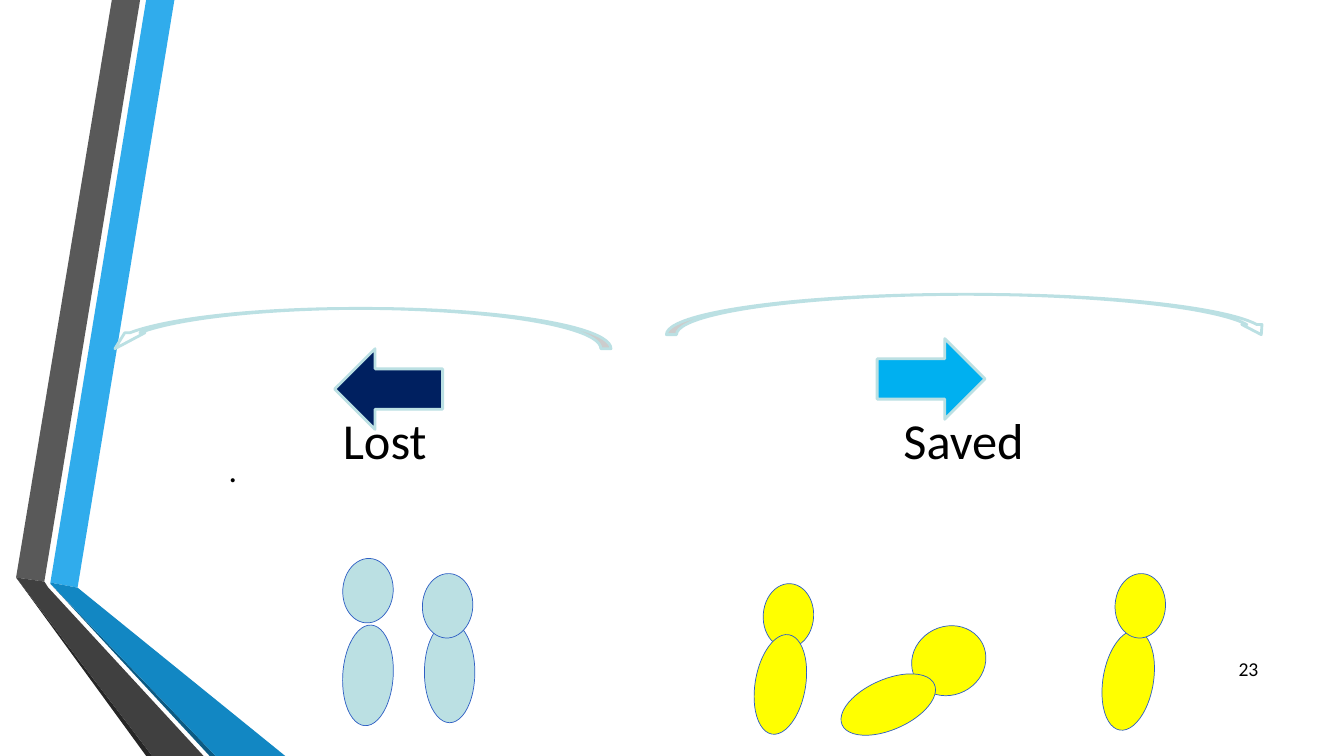
from dataclasses import dataclass

from lxml.etree import SubElement
from pptx import Presentation
from pptx.dml.color import RGBColor
from pptx.enum.shapes import MSO_SHAPE
from pptx.enum.text import MSO_ANCHOR, PP_ALIGN
from pptx.oxml.ns import qn
from pptx.util import Inches, Pt


@dataclass(frozen=True)
class Theme:
    font: str = "Calibri"
    title_size: int = 36
    body_size: int = 24
    number_size: int = 14
    text: str = "000000"
    white: str = "FFFFFF"
    pale: str = "BBE0E3"
    yellow: str = "FFFF00"
    navy: str = "002060"
    sky: str = "00B0F0"
    figure_line: str = "2F5FC4"
    ribbon_blue: str = "30ACEC"
    ribbon_blue_fold: str = "1287C3"
    ribbon_blue_edge: str = "0C5A82"
    ribbon_gray: str = "595959"
    ribbon_gray_fold: str = "404040"
    ribbon_gray_edge: str = "262626"


class SlideBuilder:
    def __init__(self, slide, theme):
        self.slide = slide
        self.theme = theme

    def paint(self, shape, fill, line=None, width=0):
        shape.shadow.inherit = False
        shape.fill.solid()
        shape.fill.fore_color.rgb = RGBColor.from_string(fill)
        if line:
            shape.line.color.rgb = RGBColor.from_string(line)
            shape.line.width = Pt(width)
        else:
            shape.line.fill.background()

    def style_text(self, paragraph, size, align=PP_ALIGN.LEFT):
        paragraph.alignment = align
        paragraph.font.name = self.theme.font
        paragraph.font.size = Pt(size)
        paragraph.font.color.rgb = RGBColor.from_string(self.theme.text)

    def title(self, labels, tab_stops, box):
        """Set each label at its own tab stop on the bottom line of the title."""
        shape = self.slide.shapes.title
        shape.left, shape.top, shape.width, shape.height = map(Inches, box)
        frame = shape.text_frame
        frame.vertical_anchor = MSO_ANCHOR.BOTTOM
        frame.word_wrap = True
        paragraph = frame.paragraphs[0]
        paragraph.text = "".join(f"\t{label}" for label in labels)
        paragraph.line_spacing = 1.0
        self.style_text(paragraph, self.theme.title_size)
        tab_list = SubElement(paragraph._p.get_or_add_pPr(), qn("a:tabLst"))
        for position in tab_stops:
            SubElement(tab_list, qn("a:tab"), pos=str(Inches(position)), algn="l")

    def text(self, content, box, size, align=PP_ALIGN.LEFT):
        frame = self.slide.shapes.add_textbox(*map(Inches, box)).text_frame
        frame.word_wrap = True
        frame.vertical_anchor = MSO_ANCHOR.MIDDLE
        frame.text = content
        self.style_text(frame.paragraphs[0], size, align)

    def polygon(self, points, fill):
        start, *others = [(Inches(x), Inches(y)) for x, y in points]
        builder = self.slide.shapes.build_freeform(*start)
        builder.add_line_segments(others, close=True)
        self.paint(builder.convert_to_shape(), fill)

    def arrow(self, kind, box, fill, adjustments=(), flipped=False):
        shape = self.slide.shapes.add_shape(kind, *map(Inches, box))
        for index, value in enumerate(adjustments):
            shape.adjustments[index] = value
        if flipped:
            shape._element.spPr.xfrm.set("flipH", "1")
        self.paint(shape, fill, self.theme.pale, 2)

    def oval(self, box, rotation, fill):
        shape = self.slide.shapes.add_shape(MSO_SHAPE.OVAL, *map(Inches, box))
        shape.rotation = rotation
        self.paint(shape, fill, self.theme.figure_line, 0.5)


def add_ribbons(builder):
    theme = builder.theme
    ribbons = [
        (theme.ribbon_blue, [(0.5, 5.78), (0.77, 5.83), (1.73, 0), (1.45, 0)]),
        (theme.ribbon_gray, [(1.39, 0), (1.11, 0), (0.16, 5.73), (0.44, 5.77)]),
        (theme.ribbon_gray_edge, [(0.16, 5.73), (1.45, 7.5), (1.51, 7.5)]),
        (theme.ribbon_blue_edge, [(0.5, 5.79), (2.08, 7.5), (2.14, 7.5)]),
        (theme.ribbon_blue_fold,
         [(0.5, 5.79), (2.14, 7.5), (2.83, 7.5), (0.77, 5.83), (0.5, 5.78)]),
        (theme.ribbon_gray_fold,
         [(2.02, 7.5), (0.48, 5.83), (0.44, 5.77), (0.16, 5.73), (1.51, 7.5)]),
    ]
    for fill, points in ribbons:
        builder.polygon(points, fill)


def add_arrows(builder):
    theme = builder.theme
    curve = MSO_SHAPE.CURVED_DOWN_ARROW
    builder.arrow(curve, (1.04, 3.06, 5.02, 0.4), theme.white, (0.25, 0.5, 0.394), True)
    builder.arrow(curve, (6.61, 2.92, 6, 0.4), theme.white, (0.25, 0.5, 0.25))
    builder.arrow(MSO_SHAPE.RIGHT_ARROW, (8.7, 3.36, 1.07, 0.8), theme.sky)
    builder.arrow(MSO_SHAPE.LEFT_ARROW, (3.32, 3.46, 1.07, 0.8), theme.navy)


def add_people(builder):
    theme = builder.theme
    body, head = (0.5, 1), (0.5, 0.64)
    parts = [
        ((3.4, 6.2), body, 3.7, theme.pale),
        ((4.21, 6.17), body, 0, theme.pale),
        ((10.94, 6.25), body, 9.7, theme.yellow),
        ((3.4, 5.54), head, 3.7, theme.pale),
        ((11.06, 5.69), head, 3.7, theme.yellow),
        ((7.57, 5.79), head, 3.7, theme.yellow),
        ((4.19, 5.69), head, 3.7, theme.pale),
        ((9.07, 6.18), (0.68, 0.75), 63.3, theme.yellow),
        ((8.56, 6.49), body, 66.3, theme.yellow),
        ((7.49, 6.29), body, 9.7, theme.yellow),
    ]
    for corner, size, rotation, fill in parts:
        builder.oval(corner + size, rotation, fill)


def main():
    presentation = Presentation()
    presentation.slide_width = Inches(13.33)
    presentation.slide_height = Inches(7.5)
    slide = presentation.slides.add_slide(presentation.slide_layouts[5])
    theme = Theme()
    builder = SlideBuilder(slide, theme)
    add_ribbons(builder)
    builder.text("23", (11.98, 6.43, 0.6, 0.4), theme.number_size, PP_ALIGN.RIGHT)
    builder.title(("Lost", "Saved"), (0.88, 6.44), (2.42, 2.02, 8.88, 2.69))
    builder.text(".", (2.17, 4.4, 9, 0.5), theme.body_size)
    add_arrows(builder)
    add_people(builder)
    presentation.save("out.pptx")


if __name__ == "__main__":
    main()
